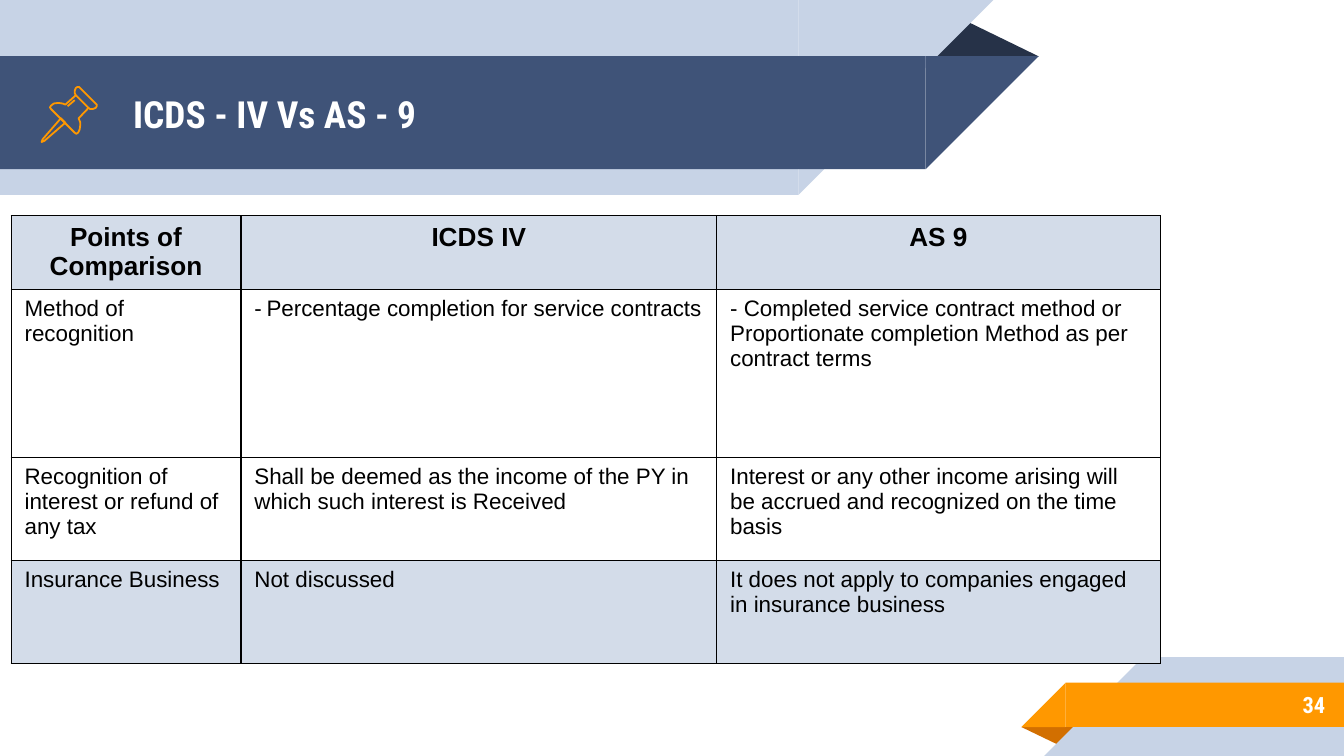
from lxml import etree
from pptx import Presentation
from pptx.dml.color import RGBColor
from pptx.enum.shapes import MSO_SHAPE
from pptx.enum.text import MSO_ANCHOR, MSO_AUTO_SIZE, PP_ALIGN
from pptx.oxml.ns import qn
from pptx.util import Inches, Pt

# Lengths are in cells of a grid of 100 columns by 56.25 rows
COLUMNS, ROWS = 100, 56.25
CELL = Inches(10) / COLUMNS
RECTANGLE, TRIANGLE = MSO_SHAPE.RECTANGLE, MSO_SHAPE.ISOSCELES_TRIANGLE
CORNER = MSO_SHAPE.RIGHT_TRIANGLE
LEFT, CENTER, RIGHT = PP_ALIGN.LEFT, PP_ALIGN.CENTER, PP_ALIGN.RIGHT
MIDDLE = MSO_ANCHOR.MIDDLE
PALE, NAVY, DARK = "C7D3E6", "3F5378", "263248"
ORANGE, RUST, SHADE = "FF9800", "D26F00", "D3DCE9"
WHITE, BLACK = "FFFFFF", "000000"
HEADING_FONT, BODY_FONT = "Roboto Condensed", "Arial"

# Pin outlines in hundredths of the icon's side: points and whether closed
PIN_OUTLINES = [
    ([(35, 57), (2, 95), (0, 100), (5, 98), (43, 65)], True),
    ([(62, 15), (85, 38), (88, 40), (93, 40), (98, 38), (100, 35), (100, 32),
      (68, 0), (65, 0), (62, 2), (60, 7), (60, 11)], True),
    ([(62, 15), (43, 32), (38, 30), (30, 29), (22, 30), (17, 34), (15, 37),
      (17, 40), (60, 83), (63, 85), (66, 83), (69, 77), (70, 70), (70, 64),
      (67, 57), (85, 38)], False),
    ([(47, 35), (60, 24)], False),
]

TABLE_COLUMNS = [17.1, 35.4, 33]
TABLE_ROWS = [5.5, 12.5, 7.65, 7.65]
TABLE_TEXT = [
    [["Points of", "Comparison"], ["ICDS IV"], ["AS 9"]],
    [["Method of recognition"],
     ["Percentage completion for service contracts"],
     ["- Completed service contract method or",
      "Proportionate completion Method as per contract terms"]],
    [["Recognition of", "interest or refund of any tax"],
     ["Shall be deemed as the income of the PY in which such interest is "
      "Received"],
     ["Interest or any other income arising will be accrued and recognized "
      "on the time basis"]],
    [["Insurance Business"], ["Not discussed"],
     ["It does not apply to companies engaged in insurance business"]],
]
SHADED_ROWS = (0, 3)
BULLET_CELL = (1, 1)


def grid(*lengths):
    return [round(length * CELL) for length in lengths]


def color(value):
    return RGBColor.from_string(value)


def write(paragraph, text, size=12, font=BODY_FONT, fill=BLACK, bold=False,
          align=LEFT):
    paragraph.alignment = align
    run = paragraph.add_run()
    run.text = text
    run.font.size, run.font.name, run.font.bold = Pt(size), font, bold
    run.font.color.rgb = color(fill)


def write_label(shape, box, text, **text_format):
    """Place a one-line heading, centred in its height."""
    shape.left, shape.top, shape.width, shape.height = grid(*box)
    frame = shape.text_frame
    frame.word_wrap, frame.auto_size = True, MSO_AUTO_SIZE.NONE
    frame.vertical_anchor = MIDDLE
    frame.margin_left = frame.margin_right = Inches(0.1)
    frame.margin_top = frame.margin_bottom = Inches(0.1)
    write(frame.paragraphs[0], text, font=HEADING_FONT, fill=WHITE, bold=True,
          **text_format)


def add_plain(slide, kind, box, fill, flip=None, rotation=0):
    shape = slide.shapes.add_shape(kind, *grid(*box))
    shape.shadow.inherit = False
    shape.fill.solid()
    shape.fill.fore_color.rgb = color(fill)
    shape.line.fill.background()
    shape.rotation = rotation
    if flip:
        shape._element.spPr.xfrm.set(flip, "1")
    return shape


def add_ribbon(slide, box, fill, slant_right):
    """A band with one slanted end, as wide as the band is high."""
    left, top, width, height = box
    straight = width - height
    if slant_right:
        body, tip, flip, rotation = left, left + straight, "flipH", 180
    else:
        body, tip, flip, rotation = left + height, left, "flipH", 0
    add_plain(slide, RECTANGLE, (body, top, straight, height), fill, flip,
              rotation)
    add_plain(slide, CORNER, (tip, top, height, height), fill, flip, rotation)


def add_fold(slide, box, fill, rotation=0):
    fold = add_plain(slide, TRIANGLE, box, fill, rotation=rotation)
    fold.adjustments[0] = 0.324


def add_pin(slide, left, top, side):
    scale = side * CELL / 100
    for points, closed in PIN_OUTLINES:
        builder = slide.shapes.build_freeform(*points[0], scale=scale)
        builder.add_line_segments(points[1:], close=closed)
        outline = builder.convert_to_shape(*grid(left, top))
        outline.shadow.inherit = False
        outline.fill.background()
        outline.line.color.rgb = color(ORANGE)
        outline.line.width = Pt(0.96)


def add_header(slide, left, top, width, height):
    band_top, band_height = top + 4.17, 8.42
    add_fold(slide, (left + width - 8.5, top + 1.4, 8.5, 2.8), DARK)
    add_ribbon(slide, (left, top, width - 3.4, height), PALE, True)
    add_ribbon(slide, (left, band_top, width, band_height), NAVY, True)
    write_label(slide.shapes.title, (left + 8.9, band_top + 0.1, 60.1, 8.4),
                "ICDS - IV Vs AS - 9", size=20)
    add_pin(slide, left + 3.1, band_top + 2.3, 4.1)


def add_footer(slide, left, top, width, height):
    band_top, band_height = top + 1.9, 3.3
    add_fold(slide, (left, band_top + band_height, 4.3, 1.4), RUST, 180)
    add_ribbon(slide, (left + 1.7, top, width - 1.7, height), PALE, False)
    add_ribbon(slide, (left, band_top, width, band_height), ORANGE, False)
    number = slide.shapes.add_textbox(0, 0, 0, 0)
    write_label(number, (left + 7.3, band_top - 0.1, 16.3, 3.5), "34",
                align=RIGHT)


def add_borders(cell):
    properties = cell._tc.get_or_add_tcPr()
    for position, side in enumerate(("a:lnL", "a:lnR", "a:lnT", "a:lnB")):
        line = etree.Element(qn(side), w=str(Pt(0.75)))
        fill = etree.SubElement(line, qn("a:solidFill"))
        etree.SubElement(fill, qn("a:srgbClr"), val=BLACK)
        properties.insert(position, line)


def add_dash_bullet(paragraph):
    properties = paragraph._p.get_or_add_pPr()
    properties.set("marL", str(Inches(0.09)))
    properties.set("indent", str(-Inches(0.09)))
    bullet_color = etree.SubElement(properties, qn("a:buClr"))
    etree.SubElement(bullet_color, qn("a:srgbClr"), val=BLACK)
    etree.SubElement(properties, qn("a:buSzPts"), val="1200")
    etree.SubElement(properties, qn("a:buFont"), typeface=BODY_FONT)
    etree.SubElement(properties, qn("a:buChar"), char="-")


def add_comparison(slide, left, top):
    frame = slide.shapes.add_table(
        len(TABLE_ROWS), len(TABLE_COLUMNS),
        *grid(left, top, sum(TABLE_COLUMNS), sum(TABLE_ROWS)))
    table = frame.table
    table.first_row = table.horz_banding = False
    for column, width in zip(table.columns, grid(*TABLE_COLUMNS)):
        column.width = width
    for row, height in zip(table.rows, grid(*TABLE_ROWS)):
        row.height = height
    for row, texts in enumerate(TABLE_TEXT):
        style = dict(size=14, bold=True, align=CENTER) if row == 0 else {}
        for column, lines in enumerate(texts):
            cell = table.cell(row, column)
            if row in SHADED_ROWS:
                cell.fill.solid()
                cell.fill.fore_color.rgb = color(SHADE)
            else:
                cell.fill.background()
            add_borders(cell)
            for index, line in enumerate(lines):
                text_frame = cell.text_frame
                paragraph = (text_frame.add_paragraph() if index
                             else text_frame.paragraphs[0])
                write(paragraph, line, **style)
                if (row, column) == BULLET_CELL:
                    add_dash_bullet(paragraph)


def main():
    presentation = Presentation()
    presentation.slide_width, presentation.slide_height = grid(COLUMNS, ROWS)
    title_only = presentation.slide_layouts[5]
    slide = presentation.slides.add_slide(title_only)
    add_footer(slide, 76, 48.9, COLUMNS - 76, ROWS - 48.9)
    add_header(slide, 0, 0, 77.3, 14.5)
    add_comparison(slide, 0.83, 16.05)
    # Bring the title in front of the bands
    title = slide.shapes.title._element
    title.getparent().append(title)
    presentation.save("out.pptx")


if __name__ == "__main__":
    main()
